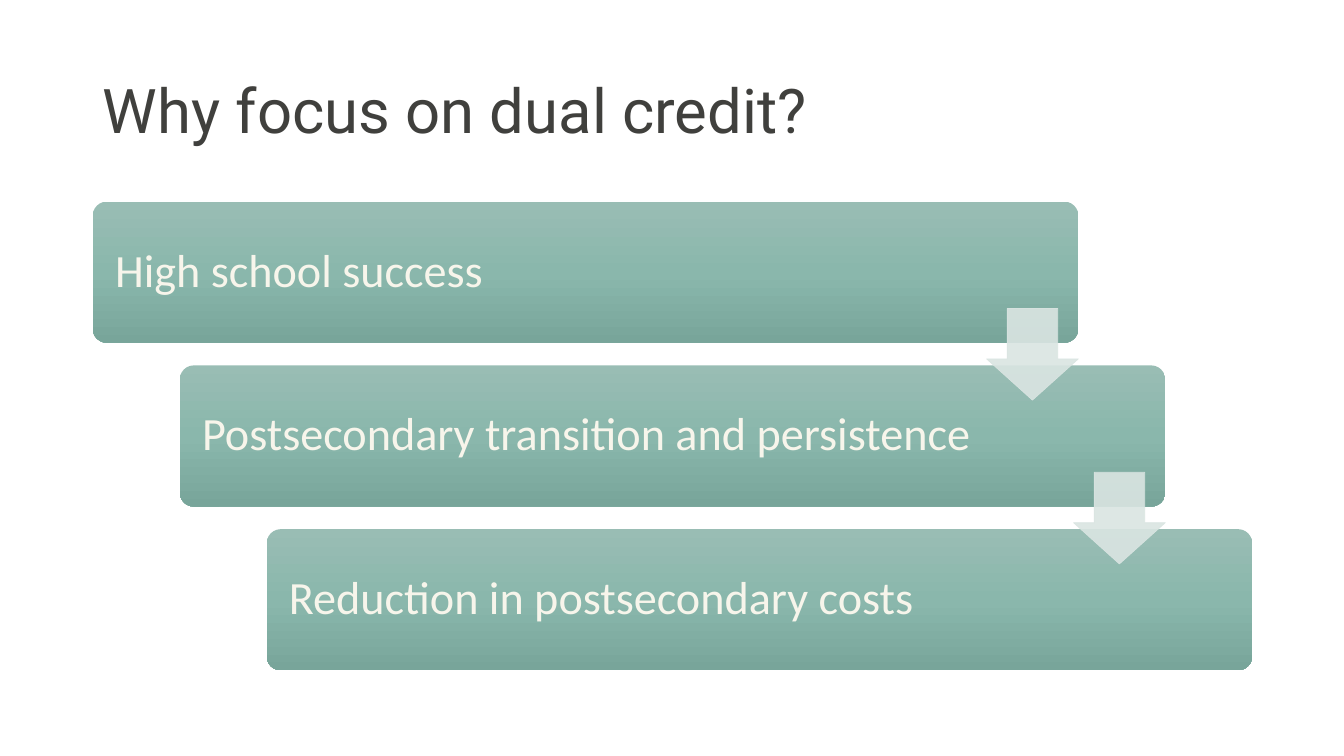
from copy import deepcopy
from dataclasses import dataclass

from lxml import etree
from pptx import Presentation
from pptx import util as u
from pptx.dml.color import RGBColor
from pptx.enum import shapes, text
from pptx.oxml.ns import qn


@dataclass(frozen=True)
class Theme:
    heading_font: str = "Roboto"
    body_font: str = "Calibri"
    heading_size: float = 44
    body_size: float = 33
    heading_color: str = "40403D"
    body_color: str = "F7F5EB"
    arrow_color: str = "DAE5E2"
    arrow_opacity: int = 90
    bar_gradient: tuple = ((0, "99BDB4"), (0.5, "8AB7AC"), (1, "78A59A"))


THEME = Theme()
WIDTH, HEIGHT = 13.33, 7.5
MARGIN = 0.92
CONTENT_WIDTH = WIDTH - 2 * MARGIN + 0.01
BAR_WIDTH = CONTENT_WIDTH * 0.85
BAR_HEIGHT = 1.4
FIRST_TOP = 2
STEP_DOWN = 1.625
ARROW_SIZE = 0.91
ARROW_DROP = 1.06
TEXT_INSET = 0.18

REASONS = [
    "High school success",
    "Postsecondary transition and persistence",
    "Reduction in postsecondary costs",
]
STEP_RIGHT = (CONTENT_WIDTH - BAR_WIDTH) / (len(REASONS) - 1)


def style_text(frame, font_name, size, color):
    frame.word_wrap = True
    frame.auto_size = text.MSO_AUTO_SIZE.NONE
    frame.vertical_anchor = text.MSO_ANCHOR.MIDDLE
    para = frame.paragraphs[0]
    para.alignment = text.PP_ALIGN.LEFT
    para.line_spacing = 0.9
    for span in para.runs:
        span.font.name = font_name
        span.font.size = u.Pt(size)
        span.font.color.rgb = RGBColor.from_string(color)


def add_title(page, wording):
    title = page.shapes.title
    title.left, title.top = u.Inches(MARGIN), u.Inches(0.4)
    title.width, title.height = u.Inches(CONTENT_WIDTH), u.Inches(1.45)
    title.text_frame.text = wording
    style_text(title.text_frame, THEME.heading_font, THEME.heading_size,
               THEME.heading_color)


def add_preset(page, preset, left, top, width, height, adjustments):
    shape = page.shapes.add_shape(preset, *map(u.Inches, (left, top, width, height)))
    shape.shadow.inherit = False
    for index, value in enumerate(adjustments):
        shape.adjustments[index] = value
    return shape


def fill_gradient(shape, stops):
    """Fill from top to bottom with any number of (position, colour) stops."""
    shape.fill.gradient()
    shape.fill.gradient_angle = 270
    stop_list = shape.fill._fill._gradFill.find(qn("a:gsLst"))
    while len(stop_list) < len(stops):
        stop_list.append(deepcopy(stop_list[-1]))
    for stop, (position, color) in zip(shape.fill.gradient_stops, stops):
        stop.position = position
        stop.color.rgb = RGBColor.from_string(color)


def set_opacity(shape, percent):
    """Apply one opacity to the solid fill and the line."""
    for color in shape._element.spPr.iter(qn("a:srgbClr")):
        etree.SubElement(color, qn("a:alpha"), val=str(percent * 1000))


def bar_position(index):
    return MARGIN + index * STEP_RIGHT, FIRST_TOP + index * STEP_DOWN


def add_bar(page, index, wording):
    bar = add_preset(page, shapes.MSO_SHAPE.ROUNDED_RECTANGLE,
                     *bar_position(index), BAR_WIDTH, BAR_HEIGHT, [0.1])
    fill_gradient(bar, THEME.bar_gradient)
    bar.line.fill.background()
    frame = bar.text_frame
    frame.text = wording
    frame.margin_left = frame.margin_right = u.Inches(TEXT_INSET)
    style_text(frame, THEME.body_font, THEME.body_size, THEME.body_color)


def add_arrow(page, index):
    """Lead from the bar at index to the next, flush with its right edge."""
    left, top = bar_position(index)
    arrow = add_preset(page, shapes.MSO_SHAPE.DOWN_ARROW,
                       left + BAR_WIDTH - ARROW_SIZE, top + ARROW_DROP,
                       ARROW_SIZE, ARROW_SIZE, [0.55, 0.45])
    color = RGBColor.from_string(THEME.arrow_color)
    arrow.fill.solid()
    arrow.fill.fore_color.rgb = color
    arrow.line.color.rgb = color
    arrow.line.width = u.Pt(0.5)
    set_opacity(arrow, THEME.arrow_opacity)


def main():
    deck = Presentation()
    deck.slide_width, deck.slide_height = u.Inches(WIDTH), u.Inches(HEIGHT)
    page = deck.slides.add_slide(deck.slide_layouts.get_by_name("Title Only"))
    add_title(page, "Why focus on dual credit?")
    for index, reason in enumerate(REASONS):
        add_bar(page, index, reason)
    for index in range(len(REASONS) - 1):
        add_arrow(page, index)
    deck.save("out.pptx")


if __name__ == "__main__":
    main()
